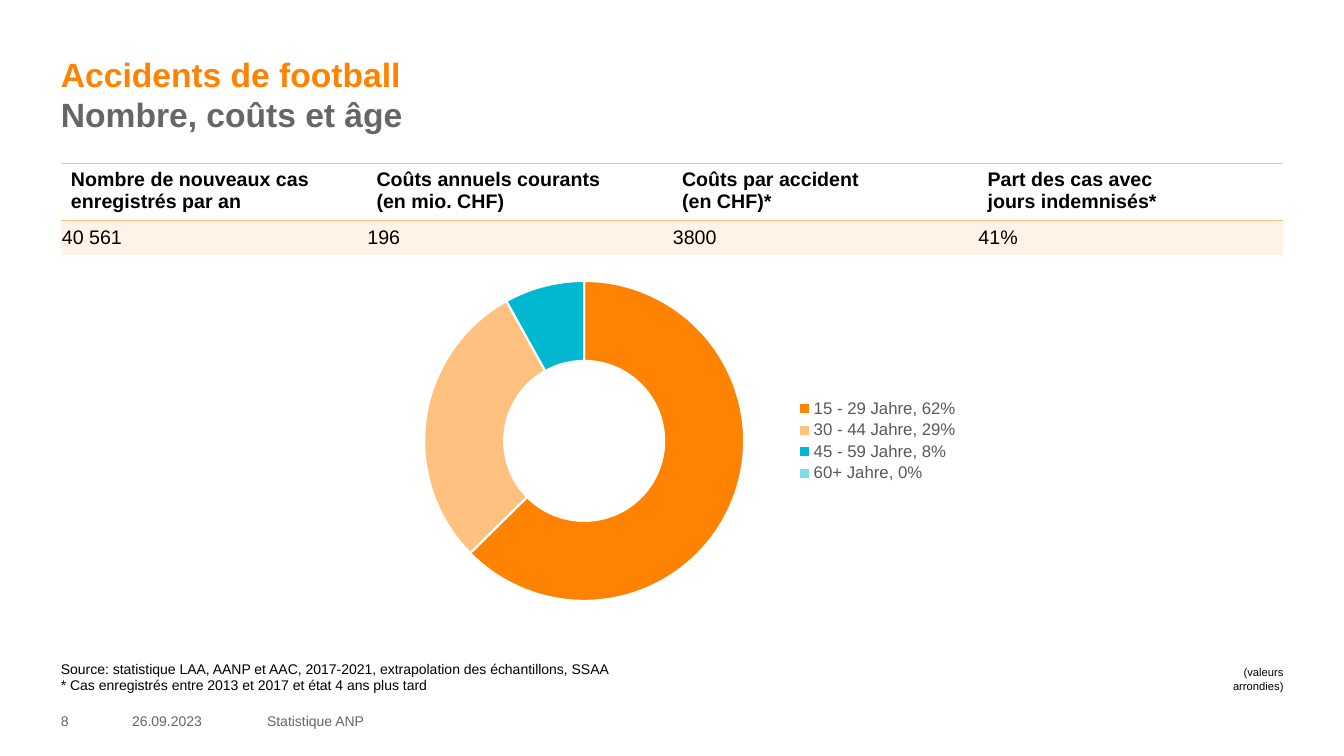
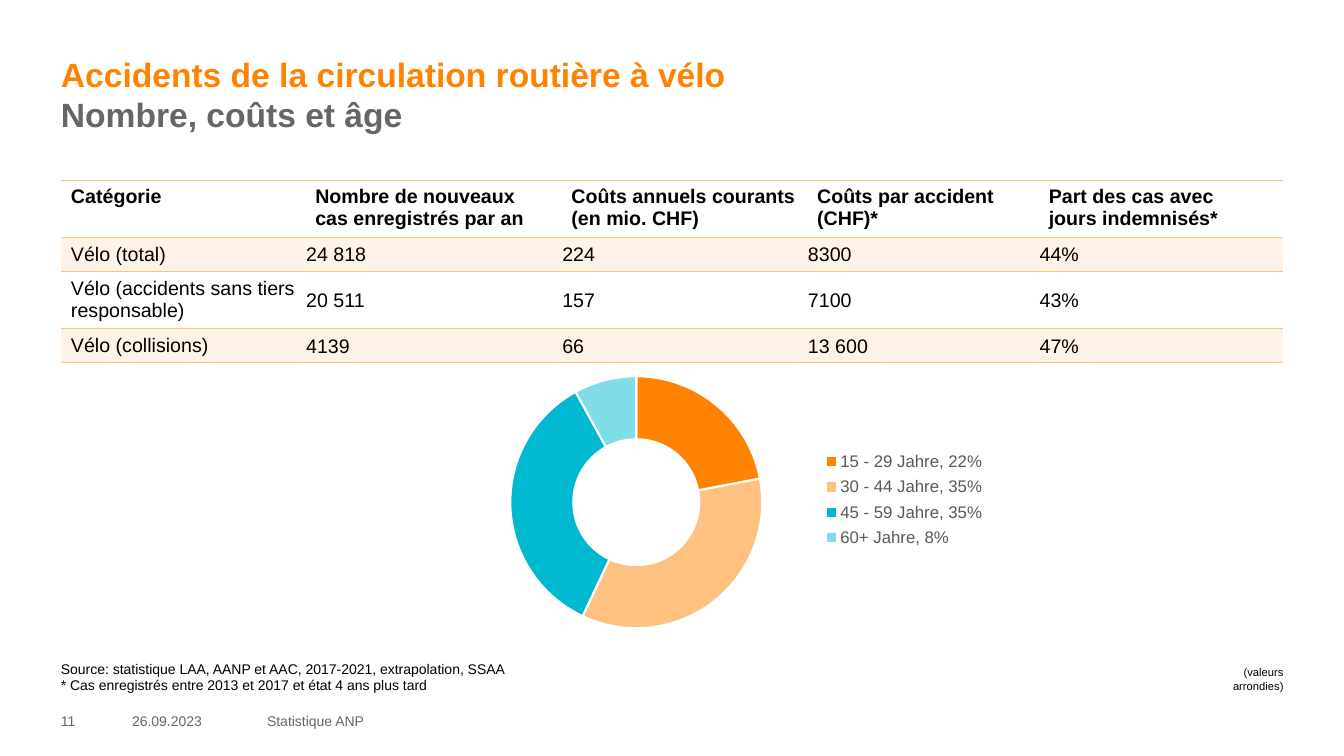
from dataclasses import dataclass

from lxml.etree import SubElement
from pptx import Presentation
from pptx.chart.data import CategoryChartData
from pptx.dml.color import RGBColor
from pptx.enum.chart import XL_CHART_TYPE as ChartType, XL_LEGEND_POSITION as LegendPosition
from pptx.enum.text import MSO_ANCHOR as Anchor, PP_ALIGN as Align
from pptx.oxml import parse_xml
from pptx.oxml.ns import nsdecls, qn
from pptx.util import Pt


@dataclass(frozen=True)
class Theme:
    font: str = "Arial"
    orange: str = "FF8200"
    apricot: str = "FFC180"
    cream: str = "FFF2E6"
    teal: str = "00B8CF"
    aqua: str = "80DCE7"
    grey: str = "666666"
    legend_grey: str = "595959"
    rule_grey: str = "C8C8C8"
    black: str = "000000"
    white: str = "FFFFFF"
    title_size: int = 24
    table_size: int = 14
    legend_size: int = 12
    small_size: int = 10
    note_size: int = 8


THEME = Theme()
SLICE_COLOURS = (THEME.orange, THEME.apricot, THEME.teal, THEME.aqua)
AGE_GROUPS = ("15 - 29 Jahre", "30 - 44 Jahre", "45 - 59 Jahre", "60+ Jahre")
NO_TABLE_STYLE = "{2D5ABB26-0587-4C30-8999-92F81FD0307C}"

LEFT, CONTENT_WIDTH = 43.5, 873
ONE_LINE, TWO_LINES = 24.4, 39.3
SUBTITLE = "Nombre, coûts et âge"
ROUNDED_NOTE = "(valeurs\varrondies)"
CASES_NOTE = "* Cas enregistrés entre 2013 et 2017 et état 4 ans plus tard"
FOOTER_DATE, FOOTER_TEXT = "26.09.2023", "Statistique ANP"

# Boxes are left, top, width, height in points.
SLIDES = [
    {
        "number": "8",
        "title": "Accidents de football",
        "table_top": 116.6,
        "columns": [CONTENT_WIDTH / 4] * 4,
        "row_heights": [TWO_LINES, ONE_LINE],
        "rules": [THEME.rule_grey, THEME.apricot, None],
        "label_columns": 0,
        "rows": [
            ["Nombre de nouveaux cas enregistrés par an", "Coûts annuels courants\v(en mio. CHF)",
             "Coûts par accident\v(en CHF)*", "Part des cas avec\vjours indemnisés*"],
            ["40 561", "196", "3800", "41%"],
        ],
        "shares": [62, 29, 8, 0],
        "chart": (270, 190.8, 420, 249),
        "ring": (303, 200.7, 228.6, 228.6),
        "legend": (566, 283, 122, 64),
        "source": "Source: statistique LAA, AANP et AAC, 2017-2021, extrapolation des échantillons, SSAA",
    },
    {
        "number": "11",
        "title": "Accidents de la circulation routière à vélo",
        "table_top": 128.7,
        "columns": [174.5, 183, 175.5, 165.5, 174.5],
        "row_heights": [TWO_LINES, ONE_LINE, TWO_LINES, ONE_LINE],
        "rules": [THEME.apricot] * 5,
        "label_columns": 1,
        "rows": [
            ["Catégorie", "Nombre de nouveaux cas enregistrés par an",
             "Coûts annuels courants (en mio. CHF)", "Coûts par accident (CHF)*",
             "Part des cas avec\vjours indemnisés*"],
            ["Vélo (total)", "24 818", "224", "8300", "44%"],
            ["Vélo (accidents sans tiers responsable)", "20 511", "157", "7100", "43%"],
            ["Vélo (collisions)", "4139", "66", "13 600", "47%"],
        ],
        "shares": [22, 35, 35, 8],
        "chart": (173.5, 258.5, 561.5, 224.5),
        "ring": (364.5, 268.8, 180, 180),
        "legend": (586, 318, 120, 78),
        "source": "Source: statistique LAA, AANP et AAC, 2017-2021, extrapolation, SSAA",
    },
]


def set_font(font, size, colour, bold=False):
    font.name = THEME.font
    font.size = Pt(size)
    font.bold = bold
    font.color.rgb = RGBColor.from_string(colour)


def set_margins(holder, left, top, right, bottom):
    holder.margin_left, holder.margin_top = Pt(left), Pt(top)
    holder.margin_right, holder.margin_bottom = Pt(right), Pt(bottom)


def add_text(slide, box, lines, size, bold=False, spacing=None, align=Align.LEFT,
             anchor=Anchor.TOP, margins=(0, 0, 0, 0)):
    """Add a text box with one paragraph per (text, colour) pair."""
    frame = slide.shapes.add_textbox(*map(Pt, box)).text_frame
    frame.word_wrap = True
    frame.vertical_anchor = anchor
    set_margins(frame, *margins)
    for index, (text, colour) in enumerate(lines):
        paragraph = frame.add_paragraph() if index else frame.paragraphs[0]
        paragraph.text = text
        paragraph.alignment = align
        if spacing:
            paragraph.line_spacing = Pt(spacing)
        set_font(paragraph.font, size, colour, bold)


def add_rule(cell, tag, colour):
    if colour:
        line = parse_xml(
            f'<a:{tag} {nsdecls("a")} w="{Pt(1)}"><a:solidFill>'
            f'<a:srgbClr val="{colour}"/></a:solidFill></a:{tag}>')
        cell._tc.get_or_add_tcPr().insert(0, line)


def add_figures_table(slide, content):
    rows, columns, heights = content["rows"], content["columns"], content["row_heights"]
    table = slide.shapes.add_table(
        len(rows), len(columns), Pt(LEFT), Pt(content["table_top"]),
        Pt(sum(columns)), Pt(sum(heights))).table
    table._tbl.tblPr.find(qn("a:tableStyleId")).text = NO_TABLE_STYLE
    for column, width in zip(table.columns, columns):
        column.width = Pt(width)
    for row_index, texts in enumerate(rows):
        table.rows[row_index].height = Pt(heights[row_index])
        is_header = row_index == 0
        for column_index, text in enumerate(texts):
            cell = table.cell(row_index, column_index)
            cell.text = text
            is_figure = not is_header and column_index >= content["label_columns"]
            set_margins(cell, *((0.7, 0.7, 0.7, 0) if is_figure else (7.2, 3.6, 7.2, 3.6)))
            cell.vertical_anchor = Anchor.TOP if is_header else Anchor.MIDDLE
            cell.fill.solid()
            colour = THEME.cream if row_index % 2 else THEME.white
            cell.fill.fore_color.rgb = RGBColor.from_string(colour)
            for paragraph in cell.text_frame.paragraphs:
                set_font(paragraph.font, THEME.table_size, THEME.black, is_header)
            add_rule(cell, "lnB", content["rules"][row_index + 1])
            add_rule(cell, "lnT", content["rules"][row_index])


def place_in_chart(element, position, box, chart_box, inner=False):
    """Fix a chart part at a box given in slide coordinates."""
    for old_layout in element.findall(qn("c:layout")):
        element.remove(old_layout)
    layout = parse_xml(f'<c:layout {nsdecls("c")}><c:manualLayout/></c:layout>')
    left, top, width, height = chart_box
    settings = [("layoutTarget", "inner")] if inner else []
    settings += [
        ("xMode", "edge"), ("yMode", "edge"),
        ("x", (box[0] - left) / width), ("y", (box[1] - top) / height),
        ("w", box[2] / width), ("h", box[3] / height),
    ]
    for name, value in settings:
        SubElement(layout[0], qn(f"c:{name}")).set("val", str(value))
    element.insert(position, layout)


def add_age_chart(slide, content):
    shares, chart_box = content["shares"], content["chart"]
    data = CategoryChartData()
    data.categories = [f"{group}, {share}%" for group, share in zip(AGE_GROUPS, shares)]
    data.add_series("Series 1", shares)
    chart = slide.shapes.add_chart(ChartType.DOUGHNUT, *map(Pt, chart_box), data).chart
    set_font(chart.font, THEME.small_size, THEME.black)
    chart.has_title = False
    chart.has_legend = True
    legend = chart.legend
    legend.position = LegendPosition.RIGHT
    legend.include_in_layout = False
    set_font(legend.font, THEME.legend_size, THEME.legend_grey)

    plot = chart.plots[0]
    plot.vary_by_categories = True
    for index, colour in enumerate(SLICE_COLOURS):
        slice_format = plot.series[0].points[index].format
        slice_format.fill.solid()
        slice_format.fill.fore_color.rgb = RGBColor.from_string(colour)
        slice_format.line.color.rgb = RGBColor.from_string(THEME.white)
        slice_format.line.width = Pt(1.5)

    plot_area = chart._chartSpace.chart.plotArea
    plot_area.find(".//" + qn("c:holeSize")).set("val", "55")
    place_in_chart(plot_area, 0, content["ring"], chart_box, inner=True)
    place_in_chart(legend._element, 1, content["legend"], chart_box)


def add_frame(slide, content):
    """Add the title, notes and footer that every slide carries."""
    add_text(slide, (LEFT, 39, CONTENT_WIDTH, 66),
             [(content["title"], THEME.orange), (SUBTITLE, THEME.grey)],
             THEME.title_size, bold=True, spacing=28.5)
    add_text(slide, (LEFT, 471.5, 607, 30),
             [(content["source"], THEME.black), (CASES_NOTE, THEME.black)],
             THEME.small_size, spacing=12)
    add_text(slide, (843, 471.5, 81, 26), [(ROUNDED_NOTE, THEME.black)], THEME.note_size,
             spacing=10, align=Align.RIGHT, margins=(7.2, 3.6, 7.2, 3.6))
    footer = [(LEFT, 40, content["number"]), (94.3, 85, FOOTER_DATE), (190.8, 618, FOOTER_TEXT)]
    for left, width, text in footer:
        add_text(slide, (left, 507.6, width, 14.4), [(text, THEME.grey)],
                 THEME.small_size, anchor=Anchor.MIDDLE)


def main():
    presentation = Presentation()
    presentation.slide_width, presentation.slide_height = Pt(960), Pt(540)
    for content in SLIDES:
        slide = presentation.slides.add_slide(presentation.slide_layouts[6])
        add_frame(slide, content)
        add_figures_table(slide, content)
        add_age_chart(slide, content)
    presentation.save("out.pptx")


if __name__ == "__main__":
    main()
